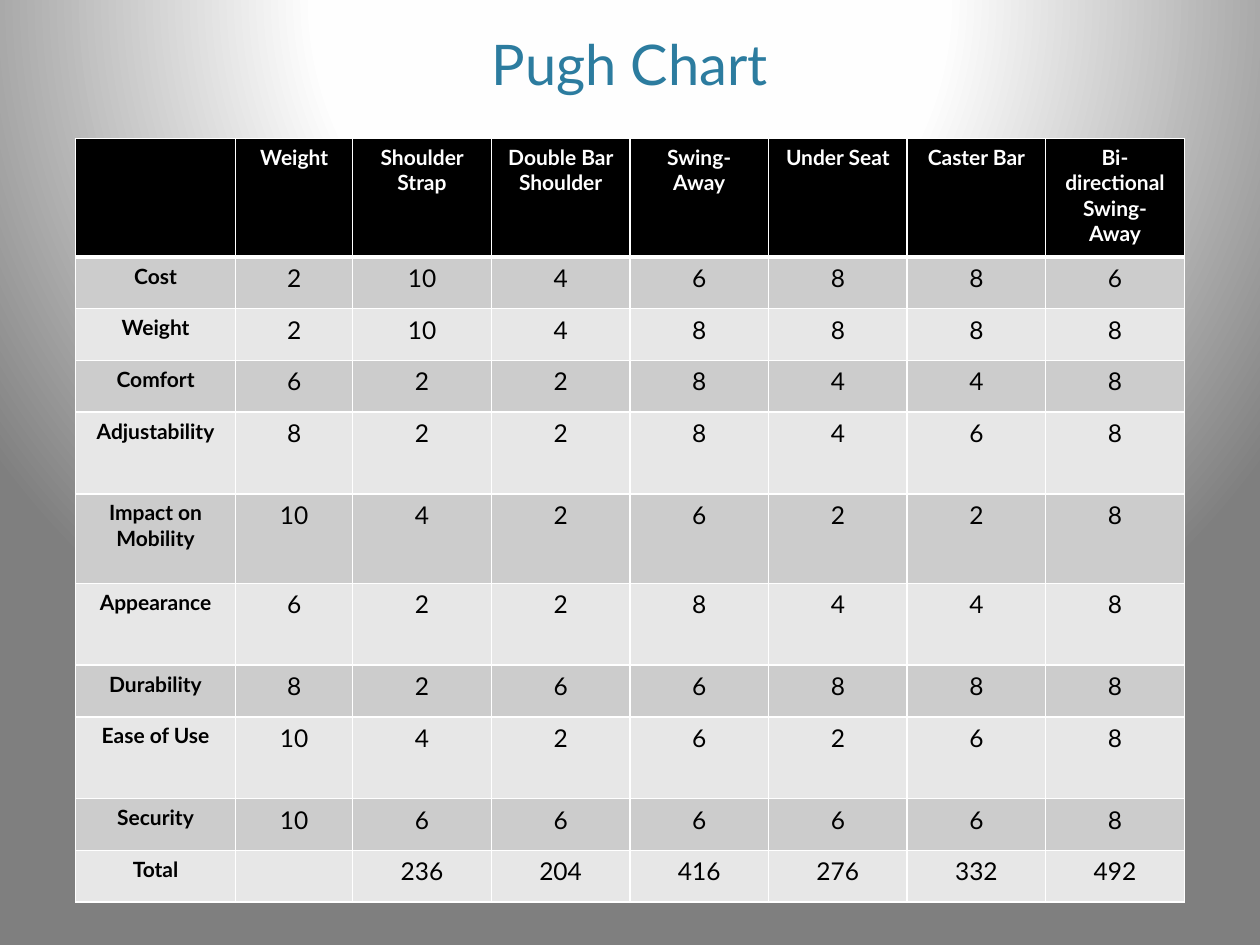
from lxml.etree import SubElement
from pptx import Presentation
from pptx.dml.color import RGBColor
from pptx.enum.text import MSO_ANCHOR, PP_ALIGN
from pptx.oxml import parse_xml
from pptx.oxml.ns import nsdecls, qn
from pptx.util import Inches, Pt

COLORS = {
    "title": "2C7C9F",
    "header": "000000",
    "header_text": "FFFFFF",
    "body_text": "000000",
    "odd_row": "CCCCCC",
    "even_row": "E7E7E7",
    "border": "FFFFFF",
}
BACKGROUND_STOPS = [(0, "FFFFFF"), (40, "FEFEFE"), (100, "7F7F7F")]

HEADERS = ["", "Weight", "Shoulder Strap", "Double Bar Shoulder", "Swing-Away",
           "Under Seat", "Caster Bar", "Bi-directional Swing-Away"]
RATINGS = [
    ("Cost", 2, 10, 4, 6, 8, 8, 6),
    ("Weight", 2, 10, 4, 8, 8, 8, 8),
    ("Comfort", 6, 2, 2, 8, 4, 4, 8),
    ("Adjustability", 8, 2, 2, 8, 4, 6, 8),
    ("Impact on Mobility", 10, 4, 2, 6, 2, 2, 8),
    ("Appearance", 6, 2, 2, 8, 4, 4, 8),
    ("Durability", 8, 2, 6, 6, 8, 8, 8),
    ("Ease of Use", 10, 4, 2, 6, 2, 6, 8),
    ("Security", 10, 6, 6, 6, 6, 6, 8),
    ("Total", "", 236, 204, 416, 276, 332, 492),
]
COLUMN_WIDTHS = [1.27, 0.93] + [1.1] * 6
ROW_HEIGHTS = [0.94, 0.41, 0.41, 0.41, 0.65, 0.71, 0.65, 0.41, 0.65, 0.41, 0.41]


class SlideBuilder:
    font = "Lato"

    def __init__(self, presentation):
        self.slide = presentation.slides.add_slide(presentation.slide_layouts[5])

    def background(self, stops):
        stop_xml = "".join(
            f'<a:gs pos="{position * 1000}"><a:srgbClr val="{color}"/></a:gs>'
            for position, color in stops)
        background = parse_xml(
            f'<p:bg {nsdecls("p", "a")}><p:bgPr><a:gradFill rotWithShape="1">'
            f'<a:gsLst>{stop_xml}</a:gsLst><a:path path="circle">'
            '<a:fillToRect l="50000" t="-80000" r="50000" b="180000"/></a:path>'
            '</a:gradFill><a:effectLst/></p:bgPr></p:bg>')
        self.slide.element.cSld.insert(0, background)

    def centered_text(self, text_frame, text, size, color, bold=False):
        text_frame.text = text
        for paragraph in text_frame.paragraphs:
            paragraph.alignment = PP_ALIGN.CENTER
            for run in paragraph.runs:
                run.font.name = self.font
                run.font.size = Pt(size)
                run.font.bold = bold
                run.font.color.rgb = RGBColor.from_string(COLORS[color])

    def title(self, text, left, top, width, height):
        title = self.slide.shapes.title
        title.left, title.top = Inches(left), Inches(top)
        title.width, title.height = Inches(width), Inches(height)
        self.centered_text(title.text_frame, text, 32, "title")
        title.text_frame.vertical_anchor = MSO_ANCHOR.BOTTOM

    def borders(self, cell, bottom_width):
        properties = cell._tc.get_or_add_tcPr()
        for side, width in (("L", 1), ("R", 1), ("T", 1), ("B", bottom_width)):
            line = SubElement(properties, qn(f"a:ln{side}"), w=str(Pt(width)))
            fill = SubElement(line, qn("a:solidFill"))
            SubElement(fill, qn("a:srgbClr"), val=COLORS["border"])

    def table(self, rows, left, top, column_widths, row_heights):
        table = self.slide.shapes.add_table(
            len(rows), len(column_widths), Inches(left), Inches(top),
            Inches(sum(column_widths)), Inches(sum(row_heights))).table
        for column, width in zip(table.columns, column_widths):
            column.width = Inches(width)
        for row, height in zip(table.rows, row_heights):
            row.height = Inches(height)
        for row_index, values in enumerate(rows):
            is_header = row_index == 0
            band = "odd_row" if row_index % 2 else "even_row"
            for column_index, value in enumerate(values):
                cell = table.cell(row_index, column_index)
                is_label = is_header or column_index == 0
                self.borders(cell, 3 if is_header else 1)
                cell.fill.solid()
                cell.fill.fore_color.rgb = RGBColor.from_string(
                    COLORS["header" if is_header else band])
                self.centered_text(
                    cell.text_frame, str(value), 12 if is_label else 14,
                    "header_text" if is_header else "body_text", is_label)


def main():
    presentation = Presentation()
    presentation.slide_width = Inches(10)
    presentation.slide_height = Inches(7.5)
    builder = SlideBuilder(presentation)
    builder.background(BACKGROUND_STOPS)
    builder.title("Pugh Chart", 0.6, 0.12, 8.8, 0.7)
    builder.table([HEADERS] + RATINGS, 0.6, 1.1, COLUMN_WIDTHS, ROW_HEIGHTS)
    presentation.save("out.pptx")


if __name__ == "__main__":
    main()
